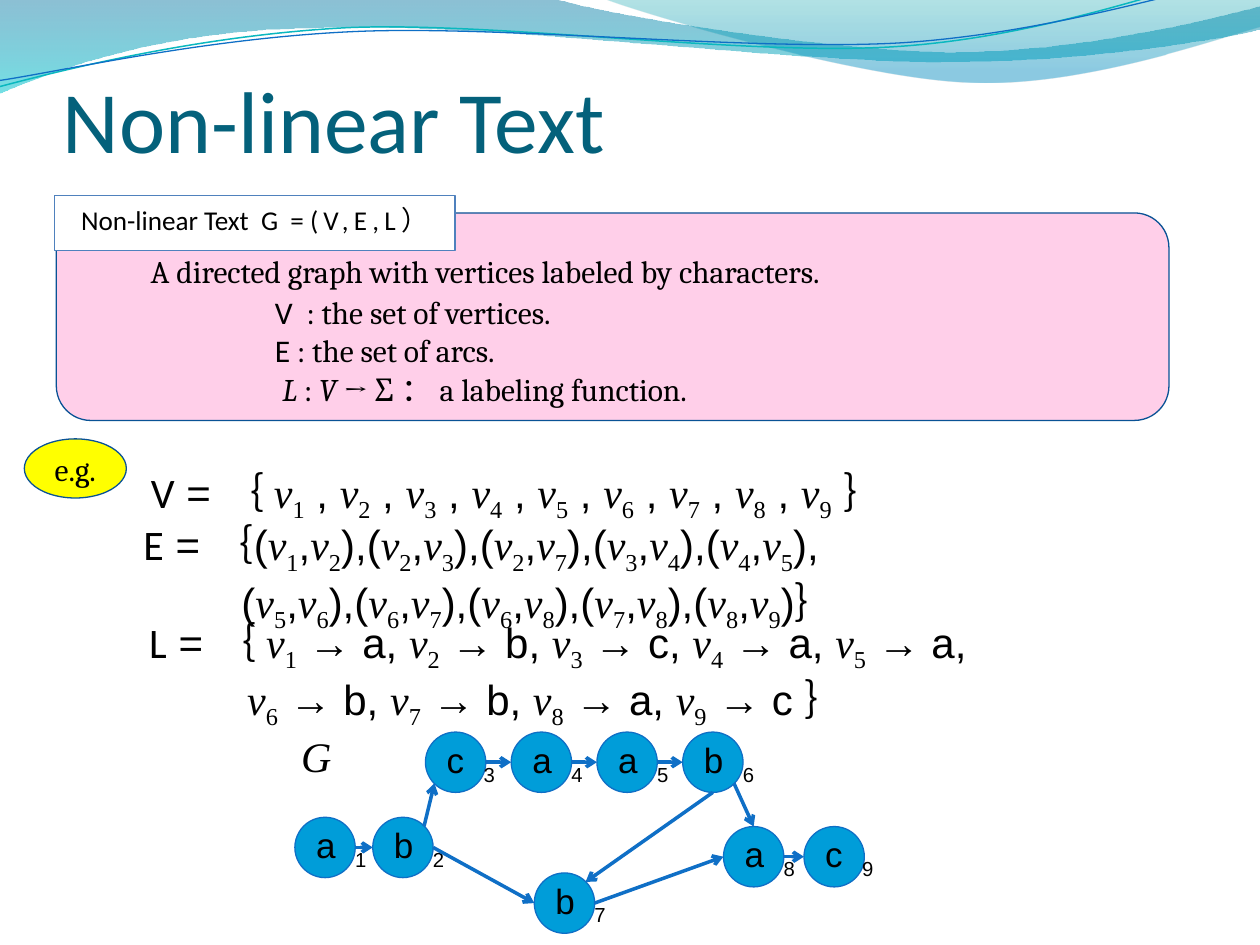
import math

from lxml import etree
from pptx import Presentation
from pptx.dml.color import RGBColor
from pptx.enum import shapes, text
from pptx.oxml import ns
from pptx.util import Pt

BLACK = RGBColor(0, 0, 0)
WHITE = RGBColor(255, 255, 255)
TITLE = RGBColor(0x04, 0x61, 0x7B)
PINK = RGBColor(0xFF, 0xCF, 0xE9)
YELLOW = RGBColor(0xFF, 0xFF, 0)
NAVY = RGBColor(0x09, 0x52, 0x95)
STEEL = RGBColor(0x4F, 0x81, 0xBD)
NODE = RGBColor(0x00, 0x9D, 0xD9)
BLUE = RGBColor(0x0F, 0x6F, 0xC6)
TEAL = RGBColor(0x0A, 0xB8, 0xBF)
DEEP_BLUE = RGBColor(0x00, 0x74, 0xA1)
CYAN = RGBColor(0x00, 0xC6, 0xCF)
SEA = RGBColor(0x00, 0xA1, 0xA9)
SKY = RGBColor(0x00, 0x8B, 0xBF)

TILT = -2.7
LABELS = "abcaabbac"
LEFT, RIGHT, TOP, BOTTOM = (0, 0.5), (1, 0.5), (0.5, 0), (0.5, 1)
TOP_RIGHT, BOTTOM_LEFT, BOTTOM_RIGHT = (0.85, 0.15), (0.15, 0.85), (0.85, 0.85)
ARCS = {
    (1, 2): (RIGHT, LEFT), (2, 3): (TOP_RIGHT, BOTTOM_LEFT),
    (2, 7): (RIGHT, LEFT), (3, 4): (RIGHT, LEFT), (4, 5): (RIGHT, LEFT),
    (5, 6): (RIGHT, LEFT), (6, 7): (BOTTOM, TOP_RIGHT),
    (6, 8): (BOTTOM_RIGHT, TOP), (7, 8): (RIGHT, LEFT), (8, 9): (RIGHT, LEFT),
}


def add_run(paragraph, words, font, size, italic=False, color=BLACK, **attributes):
    run = paragraph.add_run()
    run.text = words
    run.font.name, run.font.size = font, Pt(size)
    run.font.italic = italic
    run.font.color.rgb = color
    for name, value in attributes.items():
        run.font._element.set(name, str(value))


def add_label(slide, x, y, w, h):
    frame = slide.shapes.add_textbox(Pt(x), Pt(y), Pt(w), Pt(h)).text_frame
    frame.word_wrap = True
    return frame


def add_panel(slide, kind, x, y, w, h, fill, line):
    panel = slide.shapes.add_shape(kind, Pt(x), Pt(y), Pt(w), Pt(h))
    panel.shadow.inherit = False
    panel.fill.solid()
    panel.fill.fore_color.rgb = fill
    panel.line.color.rgb = line
    panel.line.width = Pt(0.75)
    frame = panel.text_frame
    frame.vertical_anchor = text.MSO_ANCHOR.MIDDLE
    frame.paragraphs[0].alignment = text.PP_ALIGN.CENTER
    return frame


def add_outline(slide, x, y, start, segments, close):
    spots = [(Pt(x + px * 72), Pt(y + py * 72))
             for px, py in (start, *(point for part in segments for point in part))]
    builder = slide.shapes.build_freeform(*spots[0])
    builder.add_line_segments(spots[1:], close=close)
    outline = builder.convert_to_shape()
    outline.shadow.inherit = False
    steps = iter(list(outline._element.iter(ns.qn("a:lnTo"))))
    for part in segments:
        first, *others = [next(steps) for _ in part]
        if others:
            bend = etree.Element(ns.qn("a:cubicBezTo"))
            first.addprevious(bend)
            for step in (first, *others):
                bend.append(step[0])
                step.getparent().remove(step)
    return outline


def add_wave(slide, x, y, start, segments, stops):
    wave = add_outline(slide, x, y, start, segments, True)
    wave.line.fill.background()
    wave.fill.gradient()
    wave.fill.gradient_angle = 270
    for stop, (position, color, _) in zip(wave.fill.gradient_stops, stops):
        stop.position = position
        stop.color.rgb = color
    for srgb, (_, _, opacity) in zip(wave._element.spPr.iter(ns.qn("a:srgbClr")), stops):
        etree.SubElement(srgb, ns.qn("a:alpha")).set("val", str(opacity * 1000))


def add_strand(slide, x, y, center, start, segments, color, width):
    cos, sin = math.cos(math.radians(-TILT)), math.sin(math.radians(-TILT))

    def level(point):
        dx, dy = point[0] - center[0], point[1] - center[1]
        return center[0] + dx * cos - dy * sin, center[1] + dx * sin + dy * cos

    parts = [[level(point) for point in part] for part in segments]
    strand = add_outline(slide, x, y, level(start), parts, False)
    strand.rotation = TILT
    strand.fill.background()
    strand.line.color.rgb = color
    strand.line.width = Pt(width)


def add_banner(slide, x, y):
    add_wave(slide, x, y, (0, -0.01), [
        [(4.4, -0.01)],
        [(4.76, 0.11), (6.64, 0.41), (7.58, 0.41)],
        [(8.53, 0.41), (9.58, 0.16), (10, 0.05)],
        [(10.01, 0.23)],
        [(9.83, 0.28), (8.7, 0.49), (7.46, 0.49)],
        [(6.22, 0.49), (3.82, 0.18), (2.57, 0.22)],
        [(1.29, 0.23), (0.46, 0.54), (-0.01, 0.74)],
    ], [(0, DEEP_BLUE, 45), (1, CYAN, 55)])
    add_wave(slide, x, y, (4.79, -0.01), [
        [(5.09, 0.11), (6.82, 0.62), (7.69, 0.65)],
        [(8.56, 0.69), (9.61, 0.32), (10, 0.21)],
        [(10, 0)],
    ], [(0, SEA, 30), (0.8, SKY, 45)])
    add_strand(slide, x, y, (4.99, 0.24), (-0.01, 0.69), [
        [(0.48, 0.56), (1.58, 0.28), (2.76, 0.22)],
        [(3.95, 0.17), (5.92, 0.45), (7.12, 0.37)],
        [(8.32, 0.29), (9.38, -0.13), (9.98, -0.26)],
    ], TEAL, 0.85)
    add_strand(slide, x, y, (5, 0.25), (-0.01, 0.64), [
        [(0.47, 0.57), (1.64, 0.3), (2.83, 0.25)],
        [(4.02, 0.2), (5.97, 0.41), (7.16, 0.34)],
        [(8.36, 0.26), (9.41, -0.09), (10, -0.2)],
    ], BLUE, 0.75)


def add_title(slide, x, y, w, h):
    frame = add_label(slide, x, y, w, h)
    frame.margin_left = frame.margin_right = frame.margin_bottom = 0
    frame.vertical_anchor = text.MSO_ANCHOR.BOTTOM
    add_run(frame.paragraphs[0], "Non-linear Text", "Calibri", 50, color=TITLE)


def add_definition(slide, x, y, w, h):
    add_panel(slide, shapes.MSO_SHAPE.ROUNDED_RECTANGLE, x, y, w, h, PINK, NAVY)
    summary = add_label(slide, x + 46.8, y + 18.7, 542, 29).paragraphs[0]
    add_run(summary, "A directed graph with vertices labeled by characters.", "Cambria", 18)
    heading = add_panel(slide, shapes.MSO_SHAPE.RECTANGLE,
                        x - 1.2, y - 10.1, 229, 31.7, WHITE, STEEL).paragraphs[0]
    heading.line_spacing = 0.8
    add_run(heading, "Non-linear Text  G  = ", "Calibri", 15.5)
    add_run(heading, "(V,E,L）", "Calibri", 15.5, spc=300)
    sets = add_label(slide, x + 117.8, y + 42.2, 351, 51)
    for paragraph, symbol, meaning in (
            (sets.paragraphs[0], "V", "  : the set of vertices."),
            (sets.add_paragraph(), "E", " : the set of arcs.")):
        add_run(paragraph, symbol, "Calibri", 18)
        add_run(paragraph, meaning, "Cambria", 18)
    function = add_label(slide, x + 122, y + 86.4, 351, 29).paragraphs[0]
    for words, italic in (("L", True), (" : ", False), ("V", True),
                          (" → Σ ： a labeling function.", False)):
        add_run(function, words, "Cambria", 18, italic)


def add_formula(paragraph, formula):
    lead, *terms = formula.split("v")
    if lead:
        add_run(paragraph, lead, "Arial", 24)
    for term in terms:
        add_run(paragraph, "v", "Times New Roman", 24, True)
        add_run(paragraph, term[0], "Times New Roman", 24, baseline=-25000)
        body = term[1:].rstrip("｝")
        if body:
            add_run(paragraph, body, "Arial", 24)
        if term.endswith("｝"):
            add_run(paragraph, "｝", "Calibri", 24)


def add_set(slide, x, y, w, h, symbol, first, second=""):
    frame = add_label(slide, x, y, w, h)
    add_run(frame.paragraphs[0], symbol, "Calibri", 24)
    add_formula(frame.paragraphs[0], first)
    if second:
        continuation = frame.add_paragraph()
        continuation._p.get_or_add_pPr().set("marL", str(Pt(56)))
        add_formula(continuation, second)


def add_example(slide, x, y):
    badge = add_panel(slide, shapes.MSO_SHAPE.OVAL, x, y, 58.3, 33.8, YELLOW, NAVY)
    add_run(badge.paragraphs[0], "e.g.", "Cambria", 18)
    vertices = " , ".join(f"v{n}" for n in range(1, 10))
    arcs = [f"(v{a},v{b})" for a, b in ARCS]
    maps = [f"v{n} → {letter}" for n, letter in enumerate(LABELS, 1)]
    add_set(slide, x + 65.2, y + 12, 610, 36, "V", f" = ｛ {vertices} ｝")
    add_set(slide, x + 61, y + 42.2, 617, 65.5, "E",
            f" = ｛{','.join(arcs[:5])},", f"{','.join(arcs[5:])}｝")
    add_set(slide, x + 64.3, y + 97.7, 498, 65.5, "L",
            f" = ｛ {', '.join(maps[:5])},", f"{', '.join(maps[5:])} ｝")


def add_graph(slide, x, y):
    size = 34.5
    row = [(78.1 + 49 * n, 4.3) for n in range(4)]
    spots = [(3.5, 53), (48, 53), *row, (140.3, 84.8), (248.4, 58.3), (294.4, 58.3)]
    for number, ((dx, dy), letter) in enumerate(zip(spots, LABELS), 1):
        vertex = add_panel(slide, shapes.MSO_SHAPE.OVAL, x + dx, y + dy, size, size, NODE, BLUE)
        vertex.word_wrap = False
        vertex.paragraphs[0].alignment = text.PP_ALIGN.LEFT
        add_run(vertex.paragraphs[0], f"{letter}  ", "Arial", 20)
        add_run(vertex.paragraphs[0], str(number), "Arial", 20, baseline=-25000)
    for arc, sides in ARCS.items():
        ends = [Pt(origin + spots[n - 1][i] + size * side[i])
                for n, side in zip(arc, sides) for i, origin in enumerate((x, y))]
        arrow = slide.shapes.add_connector(shapes.MSO_CONNECTOR.STRAIGHT, *ends)
        arrow.line.color.rgb = BLUE
        arrow.line.width = Pt(2)
        etree.SubElement(arrow.line._get_or_add_ln(), ns.qn("a:tailEnd")).set("type", "arrow")
        etree.SubElement(arrow._element.spPr, ns.qn("a:effectLst"))
    name = add_label(slide, x, y, 48, 36).paragraphs[0]
    add_run(name, "G", "Times New Roman", 24, True)


def main():
    deck = Presentation()
    deck.slide_width, deck.slide_height = Pt(720), Pt(540)
    slide = deck.slides.add_slide(deck.slide_layouts[6])
    add_banner(slide, 0, 0)
    add_title(slide, 36, 8, 648, 90)
    add_definition(slide, 32.2, 121.7, 635.8, 118.6)
    add_example(slide, 13.9, 250.8)
    add_graph(slide, 165, 414)
    deck.save("out.pptx")


if __name__ == "__main__":
    main()
